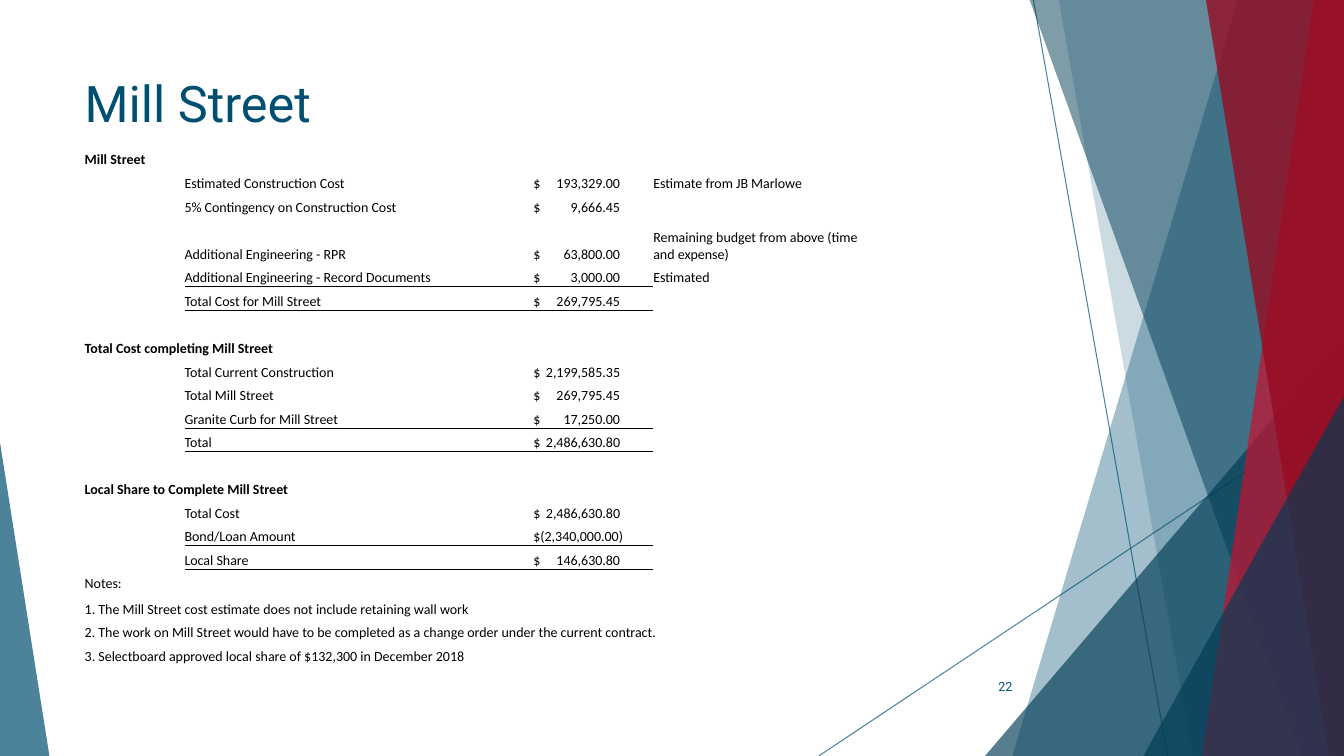
from lxml import etree
from pptx import Presentation
from pptx.dml.color import RGBColor
from pptx.enum.shapes import MSO_CONNECTOR, MSO_SHAPE
from pptx.enum.text import MSO_ANCHOR, MSO_AUTO_SIZE, PP_ALIGN
from pptx.oxml.ns import qn
from pptx.util import Inches, Pt

LINE, TRIANGLE = MSO_CONNECTOR.STRAIGHT, MSO_SHAPE.ISOSCELES_TRIANGLE
TOP, MIDDLE, BOTTOM = MSO_ANCHOR.TOP, MSO_ANCHOR.MIDDLE, MSO_ANCHOR.BOTTOM
LEFT, RIGHT = PP_ALIGN.LEFT, PP_ALIGN.RIGHT
NO_FIT = MSO_AUTO_SIZE.NONE

COLORS = {"blue": "004F71", "navy": "003B55", "red": "C8102E",
          "dark_red": "960C22", "black": "000000"}
WIDTH, HEIGHT, BLEED = 13.33, 7.5, -0.01
NO_GRID_STYLE = "{2D5ABB26-0587-4C30-8999-92F81FD0307C}"

# Top x, bottom x, colour, opacity; every shard reaches the right edge
SHARDS = [(12.28, 10.04, "blue", 36), (10.5, 11.83, "blue", 20),
          (10.21, 12.91, "navy", 50), (13.03, 11.92, "red", 70),
          (11.96, 13.18, "dark_red", 80)]

COLUMNS = [0.99, 3.43, 1.22, 2.19]
TABLE_HEIGHT = 5.16
TALL_ROWS = {3: 0.47, 18: 0.25}
AMOUNT_COL = 2
HEADINGS = {0, 7, 13}
MERGES = {7: 1, 13: 1, 18: 3, 19: 3, 20: 3}  # row: last column joined
SUBTOTALS = {5, 11, 16}  # rows with a rule above
ROWS = [
    ["Mill Street"],
    ["", "Estimated Construction Cost", "$\t193,329.00", "Estimate from JB Marlowe"],
    ["", "5% Contingency on Construction Cost", "$\t9,666.45"],
    ["", "Additional Engineering - RPR", "$\t63,800.00",
     "Remaining budget from above (time and expense)"],
    ["", "Additional Engineering - Record Documents", "$\t3,000.00", "Estimated"],
    ["", "Total Cost for Mill Street", "$\t269,795.45"],
    [],
    ["Total Cost completing Mill Street"],
    ["", "Total Current Construction", "$\t2,199,585.35"],
    ["", "Total Mill Street", "$\t269,795.45"],
    ["", "Granite Curb for Mill Street", "$\t17,250.00"],
    ["", "Total", "$\t2,486,630.80"],
    [],
    ["Local Share to Complete Mill Street"],
    ["", "Total Cost", "$\t2,486,630.80"],
    ["", "Bond/Loan Amount", "$(2,340,000.00)"],
    ["", "Local Share", "$\t146,630.80"],
    ["Notes:"],
    ["1. The Mill Street cost estimate does not include retaining wall work"],
    ["2. The work on Mill Street would have to be completed as a change order "
     "under the current contract."],
    ["3. Selectboard approved local share of $132,300 in December 2018"],
]


def write(tf, text, size=10, font="Calibri", color="black", bold=False, align=LEFT):
    p = tf.paragraphs[0]
    p.alignment = align
    if text:
        r = p.add_run()
        r.text = text
        r.font.size, r.font.name, r.font.bold = Pt(size), font, bold
        r.font.color.rgb = RGBColor.from_string(COLORS[color])
    else:  # keeps an empty row at its height
        etree.SubElement(p._p, qn("a:endParaRPr"), sz=str(size * 100))
    return p


def set_alpha(fill_owner, percent):
    rgb = next(fill_owner.iter(qn("a:srgbClr")))
    etree.SubElement(rgb, qn("a:alpha"), val=str(percent * 1000))


def add_border(cell, side):
    ln = etree.SubElement(cell._tc.get_or_add_tcPr(), qn(f"a:{side}"), w=str(Pt(0.5)))
    fill = etree.SubElement(ln, qn("a:solidFill"))
    etree.SubElement(fill, qn("a:srgbClr"), val=COLORS["black"])


class SlideBuilder:
    def __init__(self, prs):
        self.s = prs.slides.add_slide(prs.slide_layouts[5])
        self.font, self.accent = "Roboto", "blue"

    def line(self, x1, y1, x2, y2):
        cx = self.s.shapes.add_connector(LINE, Inches(x1), Inches(y1), Inches(x2), Inches(y2))
        cx.line.width = Pt(0.75)
        cx.line.color.rgb = RGBColor.from_string(COLORS[self.accent])
        set_alpha(cx.line._ln, 70)
        etree.SubElement(cx._element.spPr, qn("a:effectLst"))

    def paint(self, sp, color, opacity):
        sp.shadow.inherit = False
        sp.line.fill.background()
        sp.fill.solid()
        sp.fill.fore_color.rgb = RGBColor.from_string(COLORS[color])
        set_alpha(sp._element.spPr, opacity)

    def shard(self, top_x, bottom_x, color, opacity):
        fb = self.s.shapes.build_freeform(Inches(top_x), Inches(BLEED))
        corners = [(WIDTH, BLEED), (WIDTH, HEIGHT), (bottom_x, HEIGHT)]
        fb.add_line_segments([(Inches(x), Inches(y)) for x, y in corners])
        self.paint(fb.convert_to_shape(), color, opacity)

    def triangle(self, x, y, w, apex, color, opacity):
        sp = self.s.shapes.add_shape(TRIANGLE, Inches(x), Inches(y), Inches(w),
                                     Inches(HEIGHT - y))
        sp.adjustments[0] = apex
        self.paint(sp, color, opacity)

    def title(self, text, x, y, w, h):
        sp = self.s.shapes.title
        sp.left, sp.top, sp.width, sp.height = (Inches(v) for v in (x, y, w, h))
        tf = sp.text_frame
        tf.vertical_anchor, tf.auto_size = TOP, NO_FIT
        write(tf, text, size=36, font=self.font, color=self.accent)

    def text(self, text, x, y, w, h, **style):
        tf = self.s.shapes.add_textbox(Inches(x), Inches(y), Inches(w), Inches(h)).text_frame
        tf.word_wrap, tf.vertical_anchor = True, MIDDLE
        write(tf, text, font=self.font, color=self.accent, **style)

    def cost_table(self, x, y):
        frame = self.s.shapes.add_table(len(ROWS), len(COLUMNS), Inches(x), Inches(y),
                                        Inches(sum(COLUMNS)), Inches(TABLE_HEIGHT))
        table = frame.table
        table.first_row = table.horz_banding = False
        table._tbl.tblPr.find(qn("a:tableStyleId")).text = NO_GRID_STYLE
        for col, w in zip(table.columns, COLUMNS):
            col.width = Inches(w)
        row_h = (TABLE_HEIGHT - sum(TALL_ROWS.values())) / (len(ROWS) - len(TALL_ROWS))
        for i, values in enumerate(ROWS):
            table.rows[i].height = Inches(TALL_ROWS.get(i, row_h))
            for j in range(len(COLUMNS)):
                self.cost_cell(table.cell(i, j), i, j, values[j] if j < len(values) else "")
        for i, last in MERGES.items():
            table.cell(i, 0).merge(table.cell(i, last))

    def cost_cell(self, cell, i, j, text):
        cell.margin_left = Inches(0.03 if j == AMOUNT_COL else 0)
        cell.margin_right = cell.margin_top = cell.margin_bottom = 0
        cell.vertical_anchor = BOTTOM
        if j in (1, AMOUNT_COL):
            if i in SUBTOTALS:
                add_border(cell, "lnT")
            if i + 1 in SUBTOTALS:
                add_border(cell, "lnB")
        cell.fill.background()
        p = write(cell.text_frame, text, bold=i in HEADINGS)
        if "\t" in text:  # amounts line up on a right tab
            tabs = etree.SubElement(p._p.get_or_add_pPr(), qn("a:tabLst"))
            etree.SubElement(tabs, qn("a:tab"), pos=str(Inches(0.86)), algn="r")


def main():
    prs = Presentation()
    prs.slide_width, prs.slide_height = Inches(WIDTH), Inches(HEIGHT)
    slide = SlideBuilder(prs)

    # Angled background
    slide.line(10.25, 0, 11.58, HEIGHT)
    slide.line(WIDTH, 4.03, 8.12, HEIGHT)
    for shard in SHARDS[:2]:
        slide.shard(*shard)
    slide.triangle(9.77, 3.33, 3.56, 1, "navy", 66)
    for shard in SHARDS[2:]:
        slide.shard(*shard)
    slide.triangle(11.34, 3.93, 1.99, 1, "navy", 66)
    slide.triangle(0, 4.39, 0.49, 0, "blue", 70)

    # Title, page number and costs
    slide.title("Mill Street", 0.74, 0.67, 9.4, 1.44)
    slide.text("22", 9.39, 6.61, 0.75, 0.4, size=9, align=RIGHT)
    slide.cost_table(0.84, 1.44)

    prs.save("out.pptx")


if __name__ == "__main__":
    main()
